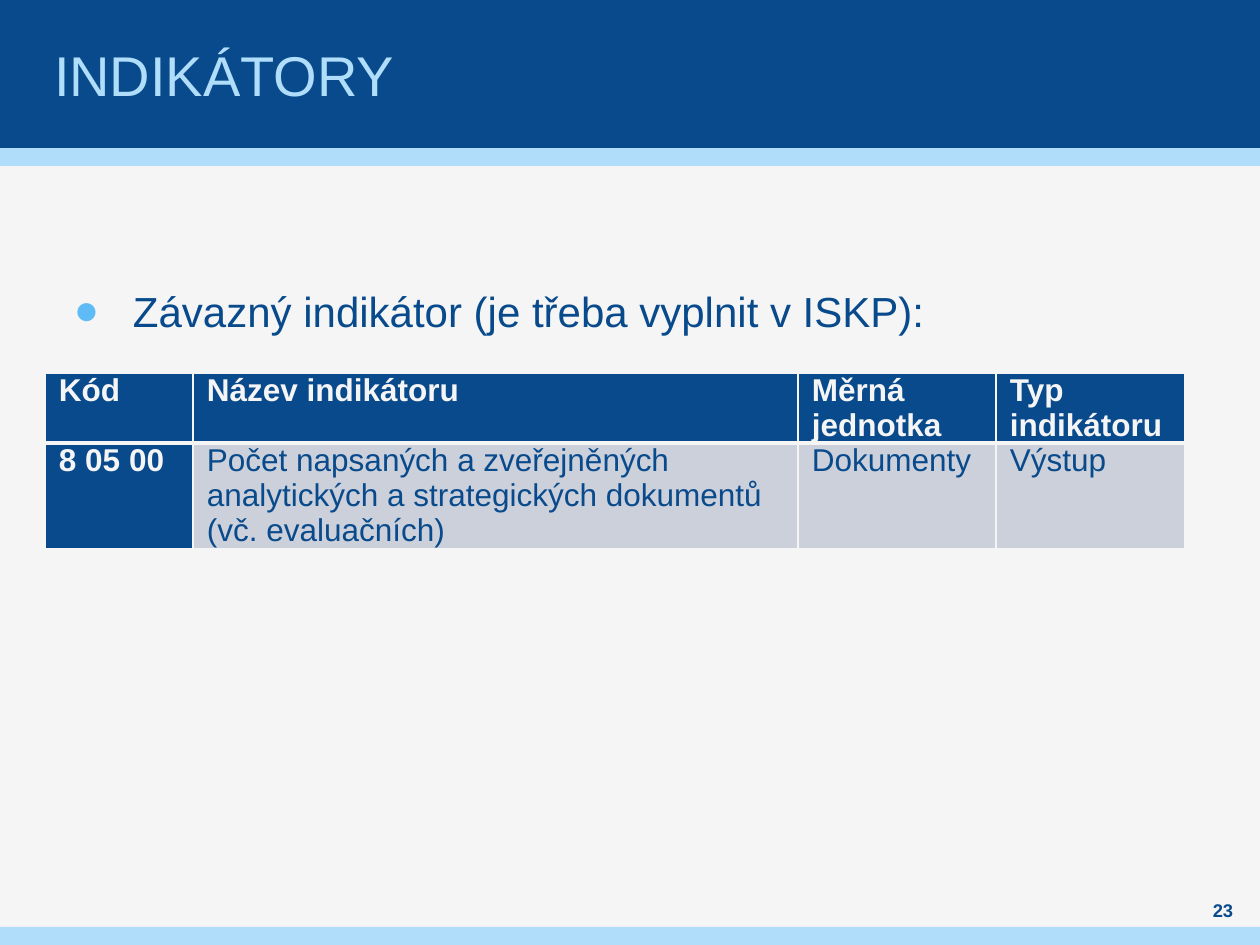
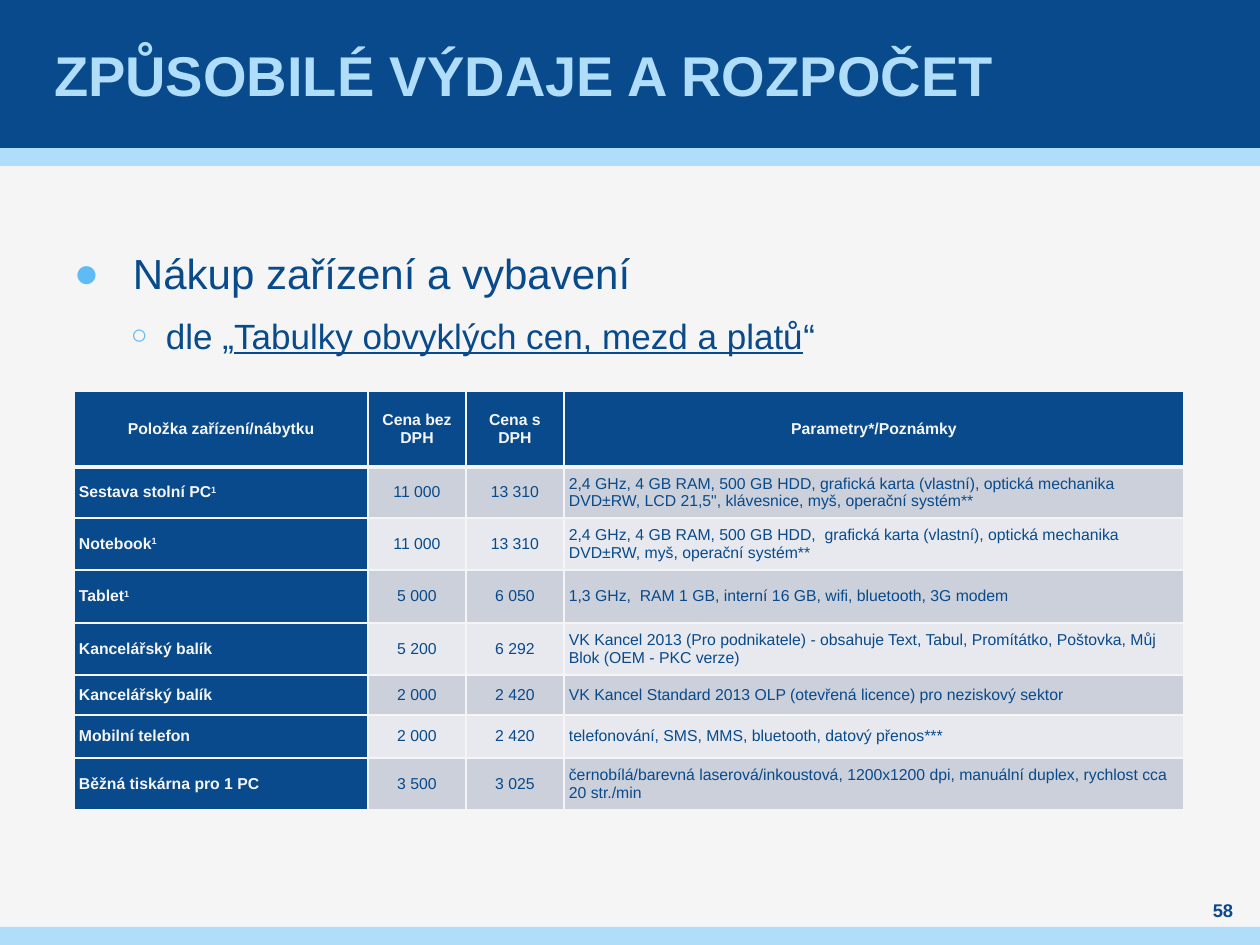
from dataclasses import dataclass
from typing import NamedTuple

from lxml import etree
from pptx import Presentation, util as u
from pptx.dml.color import RGBColor
from pptx.enum import shapes, text
from pptx.oxml import ns

EMU_PER_PX = 914400 / 126
FONT = "Arial"
NAVY, SKY, PAPER, BULLET = "084A8B", "AFDDFA", "F5F5F5", "5FBBF5"
ROW_BANDS = ("CCD0DA", "E7E9EE")
LEFT, CENTER = text.PP_ALIGN.LEFT, text.PP_ALIGN.CENTER
TOP, MIDDLE = text.MSO_ANCHOR.TOP, text.MSO_ANCHOR.MIDDLE


class Box(NamedTuple):
    left: int
    top: int
    width: int
    height: int


class Band(NamedTuple):
    box: Box
    color: str


class Span(NamedTuple):
    text: str
    underline: bool = False
    raised: bool = False


class Level(NamedTuple):
    mark: str
    mark_percent: int
    margin: int
    hanging: int
    size: int
    leading: float
    gap: int


@dataclass
class Bullet:
    level: Level
    spans: list[Span]


@dataclass
class Grid:
    left: int
    top: int
    columns: list[int]
    heights: list[int]
    rows: list[list[str | list[Span]]]
    aligns: list[text.PP_ALIGN]
    header_align: text.PP_ALIGN
    size: int
    inset: int
    anchor: text.MSO_ANCHOR
    margin: int = 0
    leading: int | None = None


@dataclass
class Topic:
    title: str
    bold: bool
    number: str
    bullets_top: int
    bullets: list[Bullet]
    grid: Grid


BANDS = [
    Band(Box(0, 148, 1260, 18), SKY),
    Band(Box(0, 0, 1260, 148), NAVY),
    Band(Box(0, 927, 1260, 18), SKY),
]
TITLE_BOX = Box(49, 0, 1160, 148)
NUMBER_BOX = Box(1191, 898, 64, 25)
MAIN = Level("●", 100, 59, 59, 24, 28.8, 6)
SUB = Level("○", 80, 92, 35, 20, 24, 3)
RAISED_ONE = Span("1", raised=True)

INDICATORS = Topic(
    "INDIKÁTORY", False, "23", 285,
    [Bullet(MAIN, [Span("Závazný indikátor (je třeba vyplnit v ISKP):")])],
    Grid(
        45, 373, [148, 605, 198, 189], [70, 106],
        [
            ["Kód", "Název indikátoru", "Měrná jednotka", "Typ indikátoru"],
            ["8 05 00",
             "Počet napsaných a zveřejněných analytických a strategických dokumentů (vč. evaluačních)",
             "Dokumenty", "Výstup"],
        ],
        [LEFT] * 4, LEFT, size=18, inset=9, anchor=TOP, margin=5, leading=20,
    ),
)

BUDGET = Topic(
    "ZPŮSOBILÉ VÝDAJE A ROZPOČET", True, "58", 248,
    [
        Bullet(MAIN, [Span("Nákup zařízení a vybavení")]),
        Bullet(SUB, [Span("dle „"), Span("Tabulky obvyklých cen, mezd a platů", underline=True), Span("“")]),
    ],
    Grid(
        74, 391, [294, 98, 98, 620], [76, 51, 52, 53, 52, 40, 43, 52],
        [
            ["Položka zařízení/nábytku", "Cena bez DPH", "Cena s DPH", "Parametry*/Poznámky"],
            [[Span("Sestava stolní PC"), RAISED_ONE], "11 000", "13 310",
             "2,4 GHz, 4 GB RAM, 500 GB HDD, grafická karta (vlastní), optická mechanika DVD±RW, "
             "LCD 21,5\", klávesnice, myš, operační systém**"],
            [[Span("Notebook"), RAISED_ONE], "11 000", "13 310",
             "2,4 GHz, 4 GB RAM, 500 GB HDD,  grafická karta (vlastní), optická mechanika DVD±RW, "
             "myš, operační systém**"],
            [[Span("Tablet"), RAISED_ONE], "5 000", "6 050",
             "1,3 GHz,  RAM 1 GB, interní 16 GB, wifi, bluetooth, 3G modem"],
            ["Kancelářský balík", "5 200", "6 292",
             "VK Kancel 2013 (Pro podnikatele) - obsahuje Text, Tabul, Promítátko, Poštovka, Můj "
             "Blok (OEM - PKC verze)"],
            ["Kancelářský balík", "2 000", "2 420",
             "VK Kancel Standard 2013 OLP (otevřená licence) pro neziskový sektor"],
            ["Mobilní telefon", "2 000", "2 420", "telefonování, SMS, MMS, bluetooth, datový přenos***"],
            ["Běžná tiskárna pro 1 PC", "3 500", "3 025",
             "černobílá/barevná laserová/inkoustová, 1200x1200 dpi, manuální duplex, "
             "rychlost cca 20 str./min"],
        ],
        [LEFT, CENTER, CENTER, LEFT], CENTER, size=9, inset=5, anchor=MIDDLE,
    ),
)


def px(length: int) -> int:
    return round(length * EMU_PER_PX)


def emu(box: Box) -> list[int]:
    return [px(length) for length in box]


def paint(fill, color: str) -> None:
    fill.solid()
    fill.fore_color.rgb = RGBColor.from_string(color)


def set_font(para, size: float, color: str, bold: bool = False) -> None:
    font = para.font
    font.name, font.size, font.bold = FONT, u.Pt(size), bold
    font.color.rgb = RGBColor.from_string(color)


def set_insets(frame, side: int) -> None:
    frame.margin_left = frame.margin_right = px(side)
    frame.margin_top = frame.margin_bottom = 0


def add_spans(para, spans: list[Span]) -> None:
    for item in spans:
        span = para.add_run()
        span.text = item.text
        if item.underline:
            span.font.underline = True
        if item.raised:
            span._r.get_or_add_rPr().set("baseline", "30000")


def set_bullet(para, level: Level) -> None:
    properties = para._p.get_or_add_pPr()
    properties.set("marL", str(px(level.margin)))
    properties.set("indent", str(-px(level.hanging)))
    color = etree.SubElement(properties, ns.qn("a:buClr"))
    etree.SubElement(color, ns.qn("a:srgbClr"), val=BULLET)
    etree.SubElement(properties, ns.qn("a:buSzPct"), val=str(level.mark_percent * 1000))
    etree.SubElement(properties, ns.qn("a:buFont"), typeface=FONT)
    etree.SubElement(properties, ns.qn("a:buChar"), char=level.mark)


def set_borders(cell, row: int) -> None:
    properties = cell._tc.get_or_add_tcPr()
    widths = {"L": 1, "R": 1, "T": 3 if row == 1 else 1, "B": 3 if row == 0 else 1}
    for side, width in widths.items():
        line = etree.SubElement(properties, ns.qn(f"a:ln{side}"), w=str(u.Pt(width)))
        fill = etree.SubElement(line, ns.qn("a:solidFill"))
        etree.SubElement(fill, ns.qn("a:srgbClr"), val=PAPER)


def add_frame(page, box: Box):
    frame = page.shapes.add_textbox(*emu(box)).text_frame
    frame.word_wrap = True
    set_insets(frame, 0)
    return frame


def add_bands(page, layout) -> None:
    for index, band in enumerate(BANDS, start=2):
        shape = page.shapes.add_shape(shapes.MSO_SHAPE.RECTANGLE, *emu(band.box))
        shape.shadow.inherit = False
        paint(shape.fill, band.color)
        shape.line.fill.background()
        layout.shapes.element.insert(index, shape.element)


def add_title(page, topic: Topic) -> None:
    title = page.shapes.title
    title.left, title.top, title.width, title.height = emu(TITLE_BOX)
    frame = title.text_frame
    frame.text = topic.title
    frame.vertical_anchor = MIDDLE
    set_insets(frame, 5)
    para = frame.paragraphs[0]
    para.alignment = LEFT
    set_font(para, 32, SKY, topic.bold)


def add_bullets(page, topic: Topic) -> None:
    frame = add_frame(page, Box(74, topic.bullets_top, 1111, 120))
    for index, bullet in enumerate(topic.bullets):
        para = frame.add_paragraph() if index else frame.paragraphs[0]
        level = bullet.level
        set_bullet(para, level)
        para.line_spacing = u.Pt(level.leading)
        para.space_before = para.space_after = u.Pt(level.gap)
        set_font(para, level.size, NAVY)
        add_spans(para, bullet.spans)


def add_number(page, number: str) -> None:
    frame = add_frame(page, NUMBER_BOX)
    frame.vertical_anchor = MIDDLE
    para = frame.paragraphs[0]
    para.text = number
    para.alignment = CENTER
    set_font(para, 10.5, NAVY, True)


def fill_cell(cell, grid: Grid, row: int, column: int) -> None:
    heading = row == 0 or column == 0
    set_borders(cell, row)
    paint(cell.fill, NAVY if heading else ROW_BANDS[(row - 1) % 2])
    set_insets(cell, grid.inset)
    cell.vertical_anchor = grid.anchor
    para = cell.text_frame.paragraphs[0]
    para.alignment = grid.aligns[column] if row else grid.header_align
    if grid.margin:
        para._p.get_or_add_pPr().set("marL", str(px(grid.margin)))
    if grid.leading:
        para.line_spacing = u.Pt(grid.leading)
    set_font(para, grid.size, PAPER if heading else NAVY, heading)
    value = grid.rows[row][column]
    add_spans(para, [Span(value)] if isinstance(value, str) else value)


def add_grid(page, grid: Grid) -> None:
    box = Box(grid.left, grid.top, sum(grid.columns), sum(grid.heights))
    table = page.shapes.add_table(len(grid.heights), len(grid.columns), *emu(box)).table
    table.first_row = table.horz_banding = False
    for column, width in enumerate(grid.columns):
        table.columns[column].width = px(width)
    for row, height in enumerate(grid.heights):
        table.rows[row].height = px(height)
        for column in range(len(grid.columns)):
            fill_cell(table.cell(row, column), grid, row, column)


def main() -> None:
    deck = Presentation()
    deck.slide_width, deck.slide_height = px(1260), px(945)
    paint(deck.slide_master.background.fill, PAPER)
    layout = deck.slide_layouts.get_by_name("Title Only")
    for index, topic in enumerate((INDICATORS, BUDGET)):
        page = deck.slides.add_slide(layout)
        if index == 0:
            add_bands(page, layout)
        add_title(page, topic)
        add_bullets(page, topic)
        add_number(page, topic.number)
        add_grid(page, topic.grid)
    deck.save("out.pptx")


if __name__ == "__main__":
    main()
